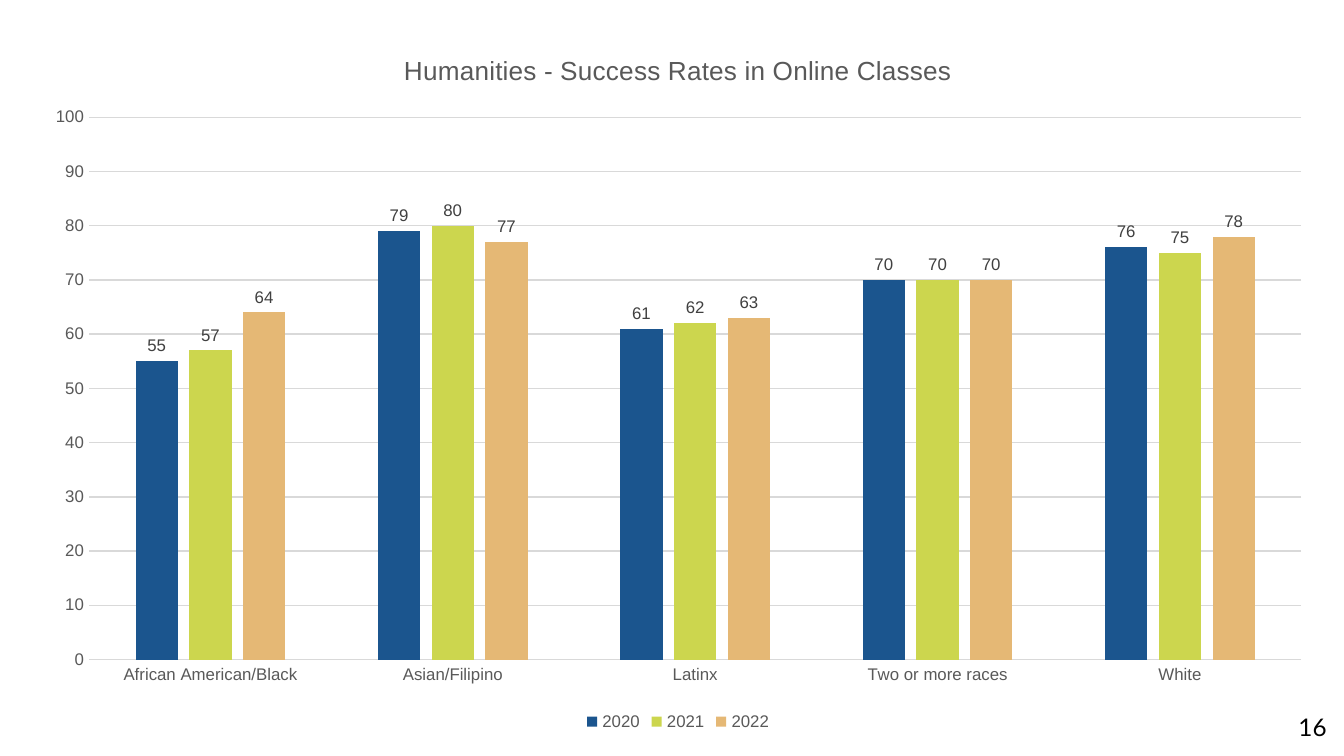
from lxml import etree
from pptx import Presentation
from pptx.chart.data import CategoryChartData
from pptx.dml.color import RGBColor
from pptx.enum.chart import XL_CHART_TYPE, XL_LABEL_POSITION, XL_LEGEND_POSITION, XL_TICK_MARK
from pptx.enum.text import MSO_ANCHOR, PP_ALIGN
from pptx.oxml.ns import qn
from pptx.util import Inches, Pt

COLUMNS = XL_CHART_TYPE.COLUMN_CLUSTERED
OUTSIDE = XL_LABEL_POSITION.OUTSIDE_END
BOTTOM = XL_LEGEND_POSITION.BOTTOM
NO_TICK = XL_TICK_MARK.NONE
MIDDLE = MSO_ANCHOR.MIDDLE
RIGHT = PP_ALIGN.RIGHT

COLORS = {"black": "000000", "text": "595959", "label": "404040", "grid": "D9D9D9",
          "2020": "1B558E", "2021": "CCD64E", "2022": "E5B875"}
CATEGORIES = ["African American/Black", "Asian/Filipino", "Latinx",
              "Two or more races", "White"]
RATES = {"2020": (55, 79, 61, 70, 76),
         "2021": (57, 80, 62, 70, 75),
         "2022": (64, 77, 63, 70, 78)}


def set_font(font, size, color, name="Arial"):
    for key, value in {"size": Pt(size), "name": name, "bold": False}.items():
        setattr(font, key, value)
    font.color.rgb = RGBColor.from_string(COLORS[color])


def place(element, index, **percents):
    """Position a chart part by percentages of the chart's size."""
    for old in element.findall(qn("c:layout")):
        element.remove(old)
    layout = etree.Element(qn("c:layout"))
    manual = etree.SubElement(layout, qn("c:manualLayout"))
    if element.tag == qn("c:plotArea"):
        etree.SubElement(manual, qn("c:layoutTarget")).set("val", "inner")
    for mode in ("xMode", "yMode"):
        etree.SubElement(manual, qn(f"c:{mode}")).set("val", "edge")
    for key, percent in percents.items():
        etree.SubElement(manual, qn(f"c:{key}")).set("val", f"{percent / 100:.4f}")
    element.insert(index, layout)


# A 16:9 page
deck = Presentation()
deck.slide_width = Inches(10)
deck.slide_height = deck.slide_width * 9 // 16
page = deck.slides.add_slide(deck.slide_layouts[6])

# Page number
box = page.shapes.add_textbox(Inches(9.27), Inches(5.19), Inches(0.6), Inches(0.43))
frame = box.text_frame
for key, value in {"margin_left": 0, "margin_right": 0, "margin_top": 0,
                   "margin_bottom": 0, "word_wrap": True,
                   "vertical_anchor": MIDDLE}.items():
    setattr(frame, key, value)
para = frame.paragraphs[0]
para.alignment = RIGHT
span = para.add_run()
span.text = "16"
set_font(span.font, 13, "black", "Lato")

# Chart
data = CategoryChartData()
data.categories = CATEGORIES
for year, rates in RATES.items():
    data.add_series(year, rates)
chart = page.shapes.add_chart(COLUMNS, Inches(0.22), Inches(0.21),
                              Inches(9.65), Inches(5.28), data).chart
set_font(chart.font, 10, "black")

# Title and legend
chart.has_title = True
title = chart.chart_title
title.include_in_layout = False
title.text_frame.text = "Humanities - Success Rates in Online Classes"
set_font(title.text_frame.paragraphs[0].runs[0].font, 14, "text")
chart.has_legend = True
chart.legend.position = BOTTOM
chart.legend.include_in_layout = False
set_font(chart.legend.font, 9, "text")

# Axes
for axis in (chart.category_axis, chart.value_axis):
    axis.major_tick_mark = axis.minor_tick_mark = NO_TICK
    set_font(axis.tick_labels.font, 9, "text")
chart.value_axis.minimum_scale = 0
chart.value_axis.maximum_scale = 100
chart.value_axis.major_unit = 10
chart.value_axis.format.line.fill.background()
chart.value_axis.has_major_gridlines = True
for line in (chart.category_axis.format.line,
             chart.value_axis.major_gridlines.format.line):
    line.color.rgb = RGBColor.from_string(COLORS["grid"])
    line.width = Pt(0.75)

# Columns and their labels
plot = chart.plots[0]
plot.gap_width, plot.overlap, plot.vary_by_categories = 219, -27, False
for series in plot.series:
    series.format.fill.solid()
    series.format.fill.fore_color.rgb = RGBColor.from_string(COLORS[series.name])
    labels = series.data_labels
    labels.show_value = True
    labels.position = OUTSIDE
    set_font(labels.font, 9, "label")

# Places inside the chart
place(chart._chartSpace.chart.plotArea, 0, x=4.6, y=12.55, w=93.45, h=76.45)
place(title._element, 1, x=28.5, y=2.9)
place(chart.legend._element, 1, x=42.5, y=95.5, w=15, h=4.8)

deck.save("out.pptx")
